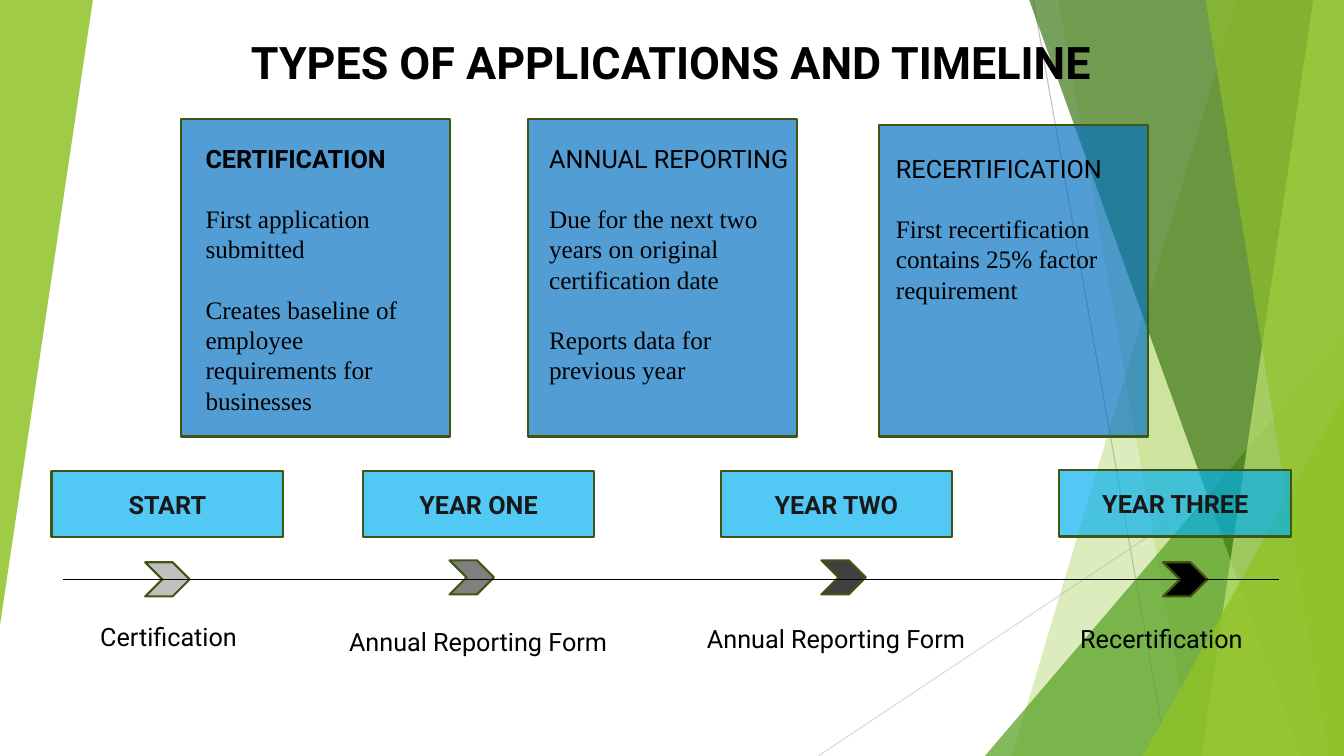
from lxml.etree import SubElement
from pptx import Presentation
from pptx.dml.color import RGBColor
from pptx.enum.shapes import MSO_CONNECTOR, MSO_SHAPE
from pptx.enum.text import MSO_ANCHOR, MSO_AUTO_SIZE, PP_ALIGN
from pptx.oxml.ns import qn
from pptx.util import Cm, Pt

COLORS = {
    "lime": "90C226", "green": "54A021", "forest": "3F7819", "pale": "C0E474",
    "olive": "3F5511", "blue": "0070C0", "sky": "00B0F0", "black": "000000",
    "ink": "181818", "silver": "BFBFBF", "mist": "D9D9D9",
}
RIGHT, BOTTOM = 33.87, 19.05


def paint(s, color, opacity, outlined=False):
    s.shadow.inherit = False
    s.fill.solid()
    s.fill.fore_color.rgb = RGBColor.from_string(COLORS[color])
    if opacity < 100:
        clr = s.element.spPr.find(qn("a:solidFill"))[0]
        SubElement(clr, qn("a:alpha"), val=str(opacity * 1000))
    if outlined:
        s.line.color.rgb = RGBColor.from_string(COLORS["olive"])
        s.line.width = Pt(1.5)
    else:
        s.line.fill.background()


def write(s, rows, align, color="black", gap=0):
    tf = s.text_frame
    tf.word_wrap = True
    for i, (text, fmt) in enumerate(rows):
        p = tf.paragraphs[0] if i == 0 else tf.add_paragraph()
        p.alignment = align
        p.space_before = Pt(gap if i else 0)
        r = p.add_run()
        r.text = text
        r.font.color.rgb = RGBColor.from_string(COLORS[color])
        for name, value in fmt.items():
            setattr(r.font, name, value)


LABEL = {"name": "Roboto", "size": Pt(18), "bold": False}
STRONG = {**LABEL, "bold": True}
BODY = {**LABEL, "name": "Times New Roman"}
TITLE = {**STRONG, "size": Pt(32)}

prs = Presentation()
prs.slide_width, prs.slide_height = Cm(RIGHT), Cm(BOTTOM)
sp = prs.slides.add_slide(prs.slide_layouts[6]).shapes

for x1, y1, x2, y2, color, width in [
    (26.04, 0, 29.41, BOTTOM, "silver", 0.75),
    (RIGHT, 10.24, 20.62, BOTTOM, "mist", 0.75),
    (1.6, 14.6, 32.23, 14.6, "black", 1),
]:
    line = sp.add_connector(MSO_CONNECTOR.STRAIGHT, Cm(x1), Cm(y1), Cm(x2), Cm(y2))
    line.line.color.rgb = RGBColor.from_string(COLORS[color])
    line.line.width = Pt(width)
    SubElement(line.element.spPr, qn("a:effectLst"))
timeline = line

facets = [
    ("band", (31.19, 25.5), "lime", 30),
    ("band", (26.67, 30.05), "lime", 20),
    ("triangle", (24.82, 8.46, 9.05, 10.59, 0), "green", 72),
    ("band", (25.93, 32.79), "forest", 70),
    ("band", (33.1, 30.28), "pale", 70),
    ("band", (30.38, 33.48), "lime", 65),
    ("triangle", (28.8, 9.98, 5.07, 9.07, 0), "lime", 80),
    ("triangle", (0, 0, 2.34, 15.75, 180), "lime", 85),
]
for kind, place, color, opacity in facets:
    if kind == "band":
        top_x, bottom_x = place
        outline = sp.build_freeform(Cm(top_x), Cm(-0.02))
        outline.add_line_segments([
            (Cm(RIGHT), Cm(-0.02)), (Cm(RIGHT), Cm(BOTTOM)), (Cm(bottom_x), Cm(BOTTOM)),
        ])
        s = outline.convert_to_shape()
    else:
        *box, turn = place
        s = sp.add_shape(MSO_SHAPE.ISOSCELES_TRIANGLE, *map(Cm, box))
        s.adjustments[0] = 1
        s.rotation = turn
    paint(s, color, opacity)

s = sp.add_textbox(Cm(4.04), Cm(0.76), Cm(25.76), Cm(1.63))
write(s, [("TYPES OF APPLICATIONS AND TIMELINE", TITLE)], PP_ALIGN.CENTER)
s.text_frame.auto_size = MSO_AUTO_SIZE.SHAPE_TO_FIT_TEXT

cards = [
    (4.57, 3, (4.93, 3.48, 6.1, 7.19), [
        ("CERTIFICATION", STRONG),
        ("First application submitted", BODY),
        ("Creates baseline of employee requirements for businesses", BODY),
    ]),
    (13.31, 3, (13.59, 3.48, 6.68, 6.4), [
        ("ANNUAL REPORTING", LABEL),
        ("Due for the next two years on original certification date", BODY),
        ("Reports data for previous year", BODY),
    ]),
    (22.15, 3.15, (22.33, 3.73, 6.3, 4.11), [
        ("RECERTIFICATION", LABEL),
        ("First recertification contains 25% factor requirement", BODY),
    ]),
]
for left, top, box, rows in cards:
    s = sp.add_shape(MSO_SHAPE.RECTANGLE, Cm(left), Cm(top), Cm(6.78), Cm(11 - top))
    paint(s, "blue", 68, outlined=True)
    s = sp.add_textbox(*map(Cm, box))
    write(s, rows, PP_ALIGN.LEFT, gap=21.6)
    s.text_frame.auto_size = MSO_AUTO_SIZE.SHAPE_TO_FIT_TEXT

stages = [
    ("START", (1.3, 11.86), (3.66, 14.17), 25, "Certification", (0.53, 15.54)),
    ("YEAR ONE", (9.14, 11.86), (11.33, 14.12), 50, "Annual Reporting Form", (8.33, 15.67)),
    ("YEAR TWO", (18.16, 11.86), (20.7, 14.12), 75, "Annual Reporting Form", (17.35, 15.57)),
    ("YEAR THREE", (26.7, 11.84), (29.31, 14.17), 100, "Recertification", (25.55, 15.57)),
]
for stage, stage_at, chevron_at, opacity, caption, caption_at in stages:
    s = sp.add_shape(MSO_SHAPE.RECTANGLE, *map(Cm, stage_at), Cm(5.84), Cm(1.68))
    paint(s, "sky", 68, outlined=True)
    write(s, [(stage, STRONG)], PP_ALIGN.CENTER, "ink")
    s.text_frame.vertical_anchor = MSO_ANCHOR.MIDDLE

    s = sp.add_textbox(*map(Cm, caption_at), Cm(7.44), Cm(1.02))
    write(s, [(caption, LABEL)], PP_ALIGN.CENTER)
    s.text_frame.auto_size = MSO_AUTO_SIZE.SHAPE_TO_FIT_TEXT

    s = sp.add_shape(MSO_SHAPE.CHEVRON, *map(Cm, chevron_at), Cm(1.12), Cm(0.86))
    paint(s, "black", opacity, outlined=True)

timeline.element.getparent().append(timeline.element)

prs.save("out.pptx")
